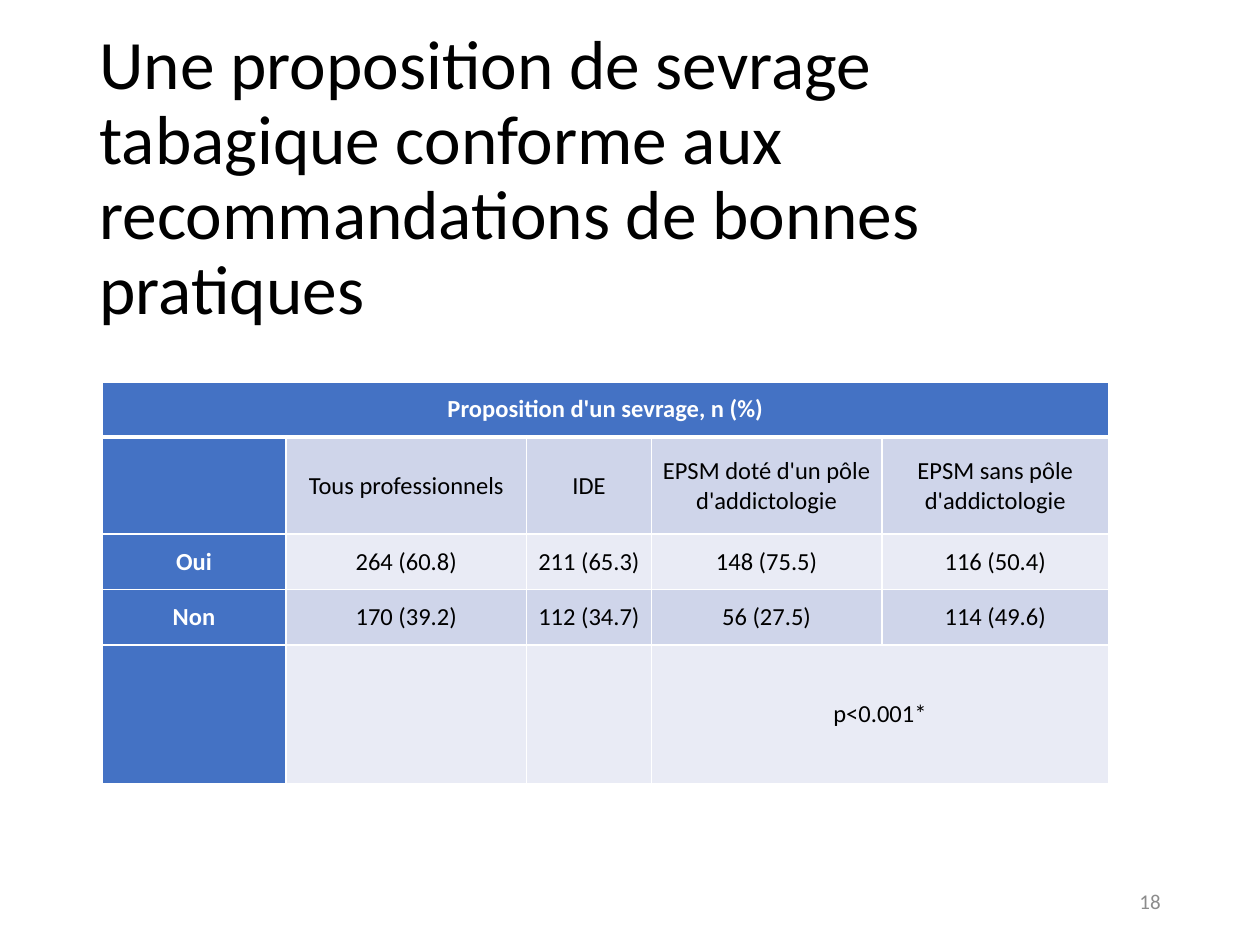
from lxml.etree import SubElement
from pptx import Presentation
from pptx.dml.color import RGBColor
from pptx.enum.text import MSO_ANCHOR, MSO_AUTO_SIZE, PP_ALIGN
from pptx.oxml.ns import qn
from pptx.util import Inches, Pt

BLACK = RGBColor(0x00, 0x00, 0x00)
WHITE = RGBColor(0xFF, 0xFF, 0xFF)
GREY = RGBColor(0x8C, 0x8C, 0x8C)
BLUE = RGBColor(0x44, 0x72, 0xC4)
BAND_DARK = RGBColor(0xCF, 0xD5, 0xEA)
BAND_LIGHT = RGBColor(0xE9, 0xEB, 0xF5)

COLUMN_WIDTHS = [1.46, 1.91, 0.99, 1.83, 1.8]
ROW_HEIGHTS = [0.44, 0.77, 0.44, 0.44, 1.1]
ROWS = [
    ["Proposition d'un sevrage, n (%)", "", "", "", ""],
    ["", "Tous professionnels", "IDE",
     "EPSM doté d'un pôle d'addictologie", "EPSM sans pôle d'addictologie"],
    ["Oui", "264 (60.8)", "211 (65.3)", "148 (75.5)", "116 (50.4)"],
    ["Non", "170 (39.2)", "112 (34.7)", "56 (27.5)", "114 (49.6)"],
    ["", "", "", "p<0.001*", ""],
]


def format_text(paragraph, size, color, align, bold=False):
    paragraph.alignment = align
    for span in paragraph.runs:
        span.font.name = "Calibri"
        span.font.size = Pt(size)
        span.font.bold = bold
        span.font.color.rgb = color


def add_border(cell, side, width):
    """Draw a white line on one side of a cell: L, R, T or B."""
    line = SubElement(cell._tc.get_or_add_tcPr(), qn(f"a:ln{side}"), w=str(Pt(width)))
    fill = SubElement(line, qn("a:solidFill"))
    SubElement(fill, qn("a:srgbClr"), val=str(WHITE))


deck = Presentation()
deck.slide_width = Inches(10)
deck.slide_height = Inches(7.5)
slide = deck.slides.add_slide(deck.slide_layouts[5])

# Title
title = slide.shapes.title
title.left, title.top = Inches(0.69), Inches(0.4)
title.width, title.height = Inches(8.62), Inches(1.45)
frame = title.text_frame
frame.text = ("Une proposition de sevrage tabagique conforme aux "
              "recommandations de bonnes pratiques")
frame.word_wrap = True
frame.auto_size = MSO_AUTO_SIZE.NONE
frame.vertical_anchor = MSO_ANCHOR.MIDDLE
frame.margin_top = Inches(0.65)
frame.paragraphs[0].line_spacing = 0.9
format_text(frame.paragraphs[0], 39.6, BLACK, PP_ALIGN.LEFT)

# Table
table = slide.shapes.add_table(
    len(ROWS), len(COLUMN_WIDTHS), Inches(0.81), Inches(3.03),
    Inches(sum(COLUMN_WIDTHS)), Inches(sum(ROW_HEIGHTS))).table
table.horz_banding = False
for column, width in zip(table.columns, COLUMN_WIDTHS):
    column.width = Inches(width)
for row, height in zip(table.rows, ROW_HEIGHTS):
    row.height = Inches(height)
table.cell(0, 0).merge(table.cell(0, 4))
table.cell(4, 3).merge(table.cell(4, 4))

for row_index, texts in enumerate(ROWS):
    for column_index, text in enumerate(texts):
        cell = table.cell(row_index, column_index)
        is_header = row_index == 0 or column_index == 0
        cell.margin_left = cell.margin_right = Inches(0.04)
        cell.margin_top = cell.margin_bottom = 0
        cell.vertical_anchor = MSO_ANCHOR.MIDDLE
        add_border(cell, "L", 1)
        add_border(cell, "R", 1)
        add_border(cell, "T", 3 if row_index == 1 else 1)
        add_border(cell, "B", 3 if row_index == 0 else 1)
        cell.fill.solid()
        if is_header:
            cell.fill.fore_color.rgb = BLUE
        else:
            cell.fill.fore_color.rgb = BAND_DARK if row_index % 2 else BAND_LIGHT
        if text:
            cell.text_frame.text = text
            format_text(cell.text_frame.paragraphs[0], 14,
                        WHITE if is_header else BLACK, PP_ALIGN.CENTER, is_header)

# Slide number
number_box = slide.shapes.add_textbox(Inches(7.06), Inches(6.95), Inches(2.25), Inches(0.4))
number_box.text_frame.text = "18"
number_box.text_frame.word_wrap = True
number_box.text_frame.vertical_anchor = MSO_ANCHOR.MIDDLE
format_text(number_box.text_frame.paragraphs[0], 12, GREY, PP_ALIGN.RIGHT)

deck.save("out.pptx")
